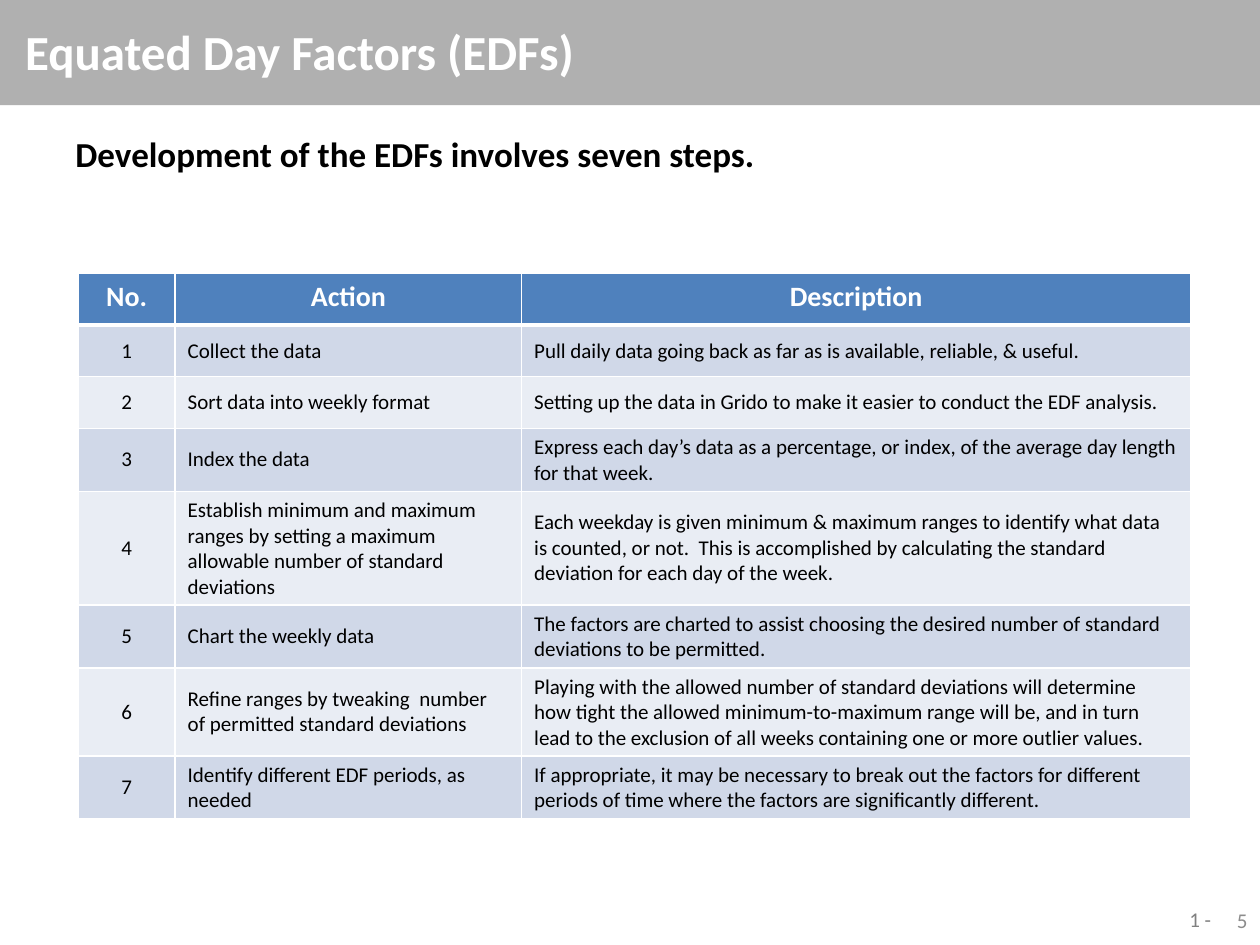
"""Build the Equated Day Factors slide with its table of seven steps."""
from dataclasses import dataclass

from lxml.etree import SubElement
from pptx import Presentation
from pptx.dml.color import RGBColor
from pptx.enum.shapes import MSO_SHAPE
from pptx.enum.text import MSO_ANCHOR, PP_ALIGN
from pptx.oxml.ns import qn
from pptx.util import Inches, Pt

STEPS = [
    ("Collect the data",
     "Pull daily data going back as far as is available, reliable, & useful."),
    ("Sort data into weekly format",
     "Setting up the data in Grido to make it easier to conduct the EDF analysis."),
    ("Index the data",
     "Express each day’s data as a percentage, or index, of the average day length "
     "for that week."),
    ("Establish minimum and maximum ranges by setting a maximum allowable number of "
     "standard deviations",
     "Each weekday is given minimum & maximum ranges to identify what data is counted, "
     "or not.  This is accomplished by calculating the standard deviation for each day "
     "of the week."),
    ("Chart the weekly data",
     "The factors are charted to assist choosing the desired number of standard "
     "deviations to be permitted."),
    ("Refine ranges by tweaking  number of permitted standard deviations",
     "Playing with the allowed number of standard deviations will determine how tight "
     "the allowed minimum-to-maximum range will be, and in turn lead to the exclusion "
     "of all weeks containing one or more outlier values."),
    ("Identify different EDF periods, as needed",
     "If appropriate, it may be necessary to break out the factors for different "
     "periods of time where the factors are significantly different."),
]


@dataclass(frozen=True)
class Theme:
    """Colours, font and type sizes."""
    font: str = "Calibri"
    white: str = "FFFFFF"
    black: str = "000000"
    bar: str = "969696"
    bar_opacity: int = 75
    head: str = "4F81BD"
    bands: tuple = ("D0D8E8", "E9EDF4")
    number: str = "8C8C8C"
    chapter: str = "808080"
    title: int = 28
    lead: int = 20
    heading: int = 16
    body: int = 12


class Deck:
    """Draws styled elements, placed in percent of the slide's size."""

    def __init__(self, prs, theme):
        """Add a blank slide to draw on."""
        self.prs, self.theme = prs, theme
        self.s = prs.slides.add_slide(prs.slide_layouts[6])

    def box(self, x, y, w, h):
        """Turn percentages into slide lengths."""
        width, height = self.prs.slide_width, self.prs.slide_height
        return [int(share * side / 100)
                for share, side in zip((x, y, w, h), (width, height) * 2)]

    def put_text(self, tf, text, size, color, bold=False, align=PP_ALIGN.LEFT):
        """Put one styled paragraph in a text frame."""
        p = tf.paragraphs[0]
        p.text, p.alignment = text, align
        p.font.name, p.font.size, p.font.bold = self.theme.font, Pt(size), bold
        p.font.color.rgb = RGBColor.from_string(color)

    def title_bar(self, area, text):
        """Draw the translucent bar that carries the title."""
        t = self.theme
        sp = self.s.shapes.add_shape(MSO_SHAPE.RECTANGLE, *self.box(*area))
        sp.shadow.inherit = False
        sp.line.fill.background()
        sp.fill.solid()
        sp.fill.fore_color.rgb = RGBColor.from_string(t.bar)
        color = sp.element.spPr.find(f"{qn('a:solidFill')}/{qn('a:srgbClr')}")
        SubElement(color, qn("a:alpha"), val=str(t.bar_opacity * 1000))
        tf = sp.text_frame
        tf.margin_left, tf.vertical_anchor = Inches(0.2), MSO_ANCHOR.MIDDLE
        self.put_text(tf, text, t.title, t.white, True)

    def text(self, area, text, size, color, bold=False, align=PP_ALIGN.LEFT,
             anchor=MSO_ANCHOR.TOP, wrap=True):
        """Draw a text box."""
        tf = self.s.shapes.add_textbox(*self.box(*area)).text_frame
        tf.word_wrap, tf.vertical_anchor = wrap, anchor
        self.put_text(tf, text, size, color, bold, align)

    def borders(self, cell, bottom):
        """Rule all four sides of a cell in white."""
        tc_pr = cell._tc.get_or_add_tcPr()
        for side, width in zip("LRTB", (1, 1, 1, bottom)):
            ln = SubElement(tc_pr, qn(f"a:ln{side}"), w=str(int(Pt(width))))
            fill = SubElement(ln, qn("a:solidFill"))
            SubElement(fill, qn("a:srgbClr"), val=self.theme.white)

    def cell(self, cell, text, fill, centred, head):
        """Fill, rule and letter one table cell."""
        t = self.theme
        self.borders(cell, 3 if head else 1)
        cell.fill.solid()
        cell.fill.fore_color.rgb = RGBColor.from_string(fill)
        cell.vertical_anchor = MSO_ANCHOR.TOP if head else MSO_ANCHOR.MIDDLE
        self.put_text(cell.text_frame, text, t.heading if head else t.body,
                      t.white if head else t.black, head,
                      PP_ALIGN.CENTER if centred else PP_ALIGN.LEFT)

    def table(self, area, widths, header, rows):
        """Draw a banded table with numbered rows."""
        grid = [header] + [(str(n), *row) for n, row in enumerate(rows, 1)]
        table = self.s.shapes.add_table(
            len(grid), len(header), *self.box(*area)).table
        for column, width in zip(table.columns, widths):
            column.width = self.box(0, 0, width, 0)[2]
        for i, row in enumerate(grid):
            head = i == 0
            fill = self.theme.head if head else self.theme.bands[(i - 1) % 2]
            for j, text in enumerate(row):
                self.cell(table.cell(i, j), text, fill, head or j == 0, head)


def main():
    """Compose and save the slide."""
    prs = Presentation()
    prs.slide_width, prs.slide_height = Inches(10), Inches(7.5)
    t = Theme()
    deck = Deck(prs, t)
    deck.title_bar((0, -0.27, 100, 11.4), "Equated Day Factors (EDFs)")
    deck.text((5, 13.33, 89.2, 5.87),
              "Development of the EDFs involves seven steps.", t.lead, t.black, True)
    deck.table((6.2, 28.93, 88.3, 43.73), (7.7, 27.5, 53.1),
               ("No.", "Action", "Description"), STEPS)
    deck.text((76.7, 94.67, 23.3, 5.33), "5", t.body, t.number,
              align=PP_ALIGN.RIGHT, anchor=MSO_ANCHOR.MIDDLE)
    deck.text((93.4, 95.33, 3.8, 4.67), "1 -", t.body, t.chapter, wrap=False)
    prs.save("out.pptx")


if __name__ == "__main__":
    main()
